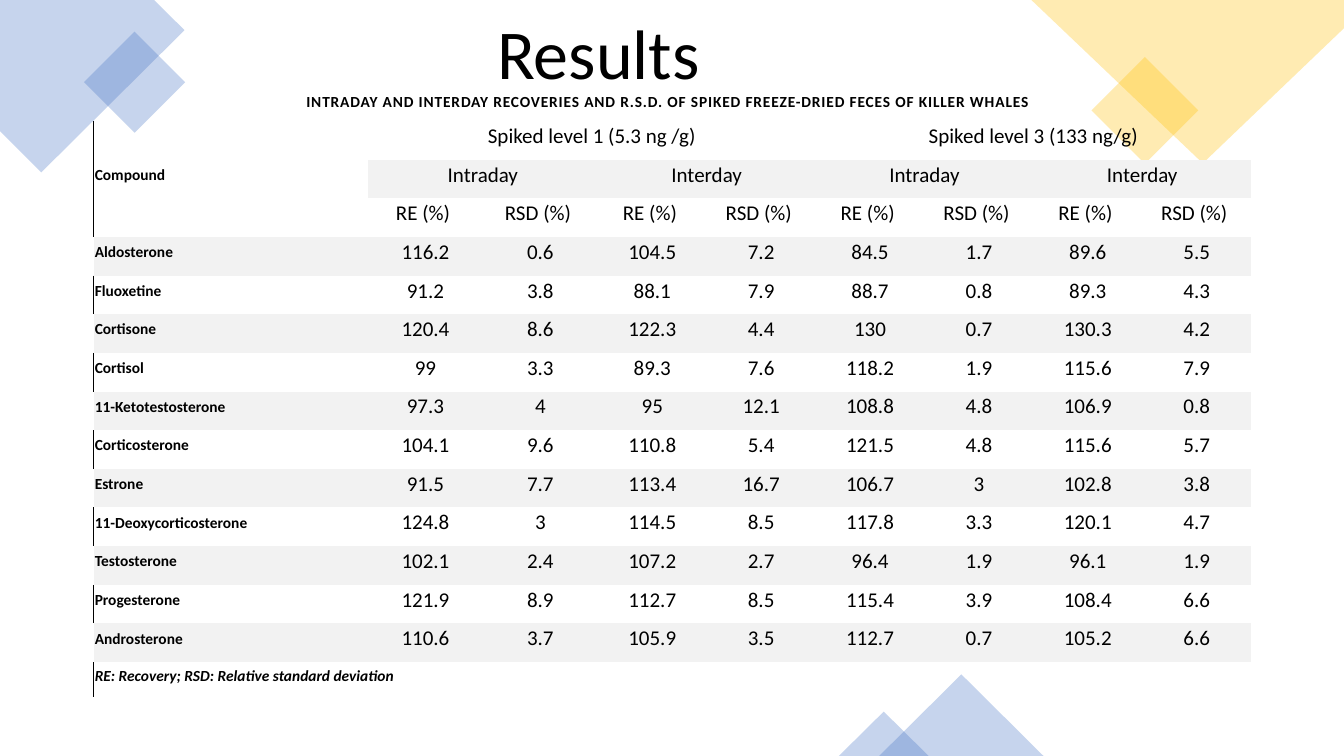
from lxml import etree
from pptx import Presentation
from pptx import util as u
from pptx.dml import color
from pptx.enum import shapes, text
from pptx.oxml import ns

Inches, Pt = u.Inches, u.Pt
HUES = {"blue": "4472C4", "gold": "FFC000", "band": "F2F2F2", "ink": "000000"}


def tint(shape, hue):
    shape.shadow.inherit = False
    shape.line.fill.background()
    shape.fill.solid()
    shape.fill.fore_color.rgb = color.RGBColor.from_string(HUES[hue])
    node = shape.element.find(".//" + ns.qn("a:srgbClr"))
    etree.SubElement(node, ns.qn("a:alpha"), val="30000")


def write(cell, words, size, bold, align):
    cell.text_frame.text = words
    para = cell.text_frame.paragraphs[0]
    para.alignment = align
    font = para.runs[0].font
    font.name, font.size, font.bold = "Calibri", Pt(size), bold
    font.color.rgb = color.RGBColor.from_string(HUES["ink"])
    cell.vertical_anchor = text.MSO_ANCHOR.MIDDLE
    cell.margin_left = cell.margin_right = cell.margin_top = Inches(0.01)
    cell.margin_bottom = Inches(0.09)
    return para.runs[0]


deck = Presentation()
deck.slide_width, deck.slide_height = Inches(13.33), Inches(7.5)
slide = deck.slides.add_slide(deck.slide_layouts[5])

title = slide.shapes.title
title.left, title.top = Inches(4.83), Inches(-0.03)
title.width, title.height = Inches(2.29), Inches(1.02)
frame = title.text_frame
frame.text = "Results"
frame.word_wrap = True
frame.auto_size = text.MSO_AUTO_SIZE.NONE
frame.vertical_anchor = text.MSO_ANCHOR.BOTTOM
para = frame.paragraphs[0]
para.alignment = text.PP_ALIGN.LEFT
para.line_spacing = 0.9
para.space_after = Pt(6)
font = para.runs[0].font
font.name, font.size = "Calibri", Pt(50)
font.color.rgb = color.RGBColor.from_string(HUES["ink"])

corners = [
    ("blue", [(1.53, 0), (0, 0), (0, 1.3), (0.41, 1.71), (1.83, 0.3)]),
    ("gold", [(13.33, 0), (10.23, 0), (11.93, 1.62), (13.33, 0.28)]),
]
for hue, points in corners:
    dots = [(Inches(x), Inches(y)) for x, y in points]
    pen = slide.shapes.build_freeform(*dots[0])
    pen.add_line_segments(dots[1:], close=True)
    tint(pen.convert_to_shape(), hue)

BOX, PEAK = shapes.MSO_SHAPE.RECTANGLE, shapes.MSO_SHAPE.ISOSCELES_TRIANGLE
accents = [
    (BOX, "blue", 315, (0.98, 0.46, 0.71, 0.71)),
    (BOX, "gold", 315, (10.98, 0.72, 0.75, 0.75)),
    (PEAK, "blue", 0, (8.72, 6.69, 1.63, 0.81)),
    (PEAK, "blue", 0, (8.32, 7.06, 0.89, 0.44)),
]
for kind, hue, turn, place in accents:
    accent = slide.shapes.add_shape(kind, *map(Inches, place))
    accent.rotation = turn
    tint(accent, hue)

results = [
    ("Aldosterone", "116.2 0.6 104.5 7.2 84.5 1.7 89.6 5.5"),
    ("Fluoxetine", "91.2 3.8 88.1 7.9 88.7 0.8 89.3 4.3"),
    ("Cortisone", "120.4 8.6 122.3 4.4 130 0.7 130.3 4.2"),
    ("Cortisol", "99 3.3 89.3 7.6 118.2 1.9 115.6 7.9"),
    ("11-Ketotestosterone", "97.3 4 95 12.1 108.8 4.8 106.9 0.8"),
    ("Corticosterone", "104.1 9.6 110.8 5.4 121.5 4.8 115.6 5.7"),
    ("Estrone", "91.5 7.7 113.4 16.7 106.7 3 102.8 3.8"),
    ("11-Deoxycorticosterone", "124.8 3 114.5 8.5 117.8 3.3 120.1 4.7"),
    ("Testosterone", "102.1 2.4 107.2 2.7 96.4 1.9 96.1 1.9"),
    ("Progesterone", "121.9 8.9 112.7 8.5 115.4 3.9 108.4 6.6"),
    ("Androsterone", "110.6 3.7 105.9 3.5 112.7 0.7 105.2 6.6"),
]
rows = [
    ["INTRADAY AND INTERDAY RECOVERIES AND R.S.D. OF SPIKED FREEZE-DRIED FECES OF KILLER WHALES  "],
    ["Compound", "Spiked level 1 (5.3 ng /g)", "", "", "", "Spiked level 3 (133 ng/g)"],
    ["", "Intraday", "", "Interday", "", "Intraday", "", "Interday"],
    [""] + ["RE (%) ", "RSD (%) "] * 4,
]
rows += [[name] + values.split() for name, values in results]
rows.append(["RE: Recovery; RSD: Relative standard deviation"])
last = len(rows) - 1

place = map(Inches, (0.93, 0.8, 11.47, 6.12))
holder = slide.shapes.add_table(len(rows), 9, *place)
table = holder.table
table.first_row = table.horz_banding = False
style = holder.element.find(".//" + ns.qn("a:tableStyleId"))
style.text = "{2D5ABB26-0587-4C30-8999-92F81FD0307C}"
for col, width in zip(table.columns, [2.72] + [1.14] * 2 + [1.08] * 6):
    col.width = Inches(width)
for row in table.rows:
    row.height = Inches((6.12 - 0.4 - 0.35) / (last - 1))
table.rows[0].height = Inches(0.4)
table.rows[last].height = Inches(0.35)

spans = [(0, 0, 0, 8), (1, 0, 3, 0), (1, 1, 1, 4), (1, 5, 1, 8), (last, 0, last, 2)]
spans += [(2, c, 2, c + 1) for c in range(1, 9, 2)]
for top, left, low, right in spans:
    table.cell(top, left).merge(table.cell(low, right))

for r, row in enumerate(rows):
    for c in range(9):
        cell = table.cell(r, c)
        words = row[c] if c < len(row) else ""
        if words:
            label = c == 0
            align = text.PP_ALIGN.LEFT if label and r else text.PP_ALIGN.CENTER
            run = write(cell, words, 11 if label else 15, label, align)
            if r == last:
                run.font.italic = True
        else:
            cell.margin_top = cell.margin_bottom = 0
        if r and r % 2 == 0 and (c or r > 3):
            cell.fill.solid()
            cell.fill.fore_color.rgb = color.RGBColor.from_string(HUES["band"])
        else:
            cell.fill.background()
        if c == 0 and (r % 2 or r == 2):
            edge = etree.Element(ns.qn("a:lnL"), w=str(Pt(1)))
            paint = etree.SubElement(edge, ns.qn("a:solidFill"))
            etree.SubElement(paint, ns.qn("a:srgbClr"), val=HUES["ink"])
            cell._tc.get_or_add_tcPr().insert(0, edge)

head = table.cell(0, 0)
head.vertical_anchor = text.MSO_ANCHOR.BOTTOM
head.margin_top = Inches(0.09)
head.text_frame.paragraphs[0].runs[0]._r.get_or_add_rPr().set("spc", "60")

deck.save("out.pptx")
